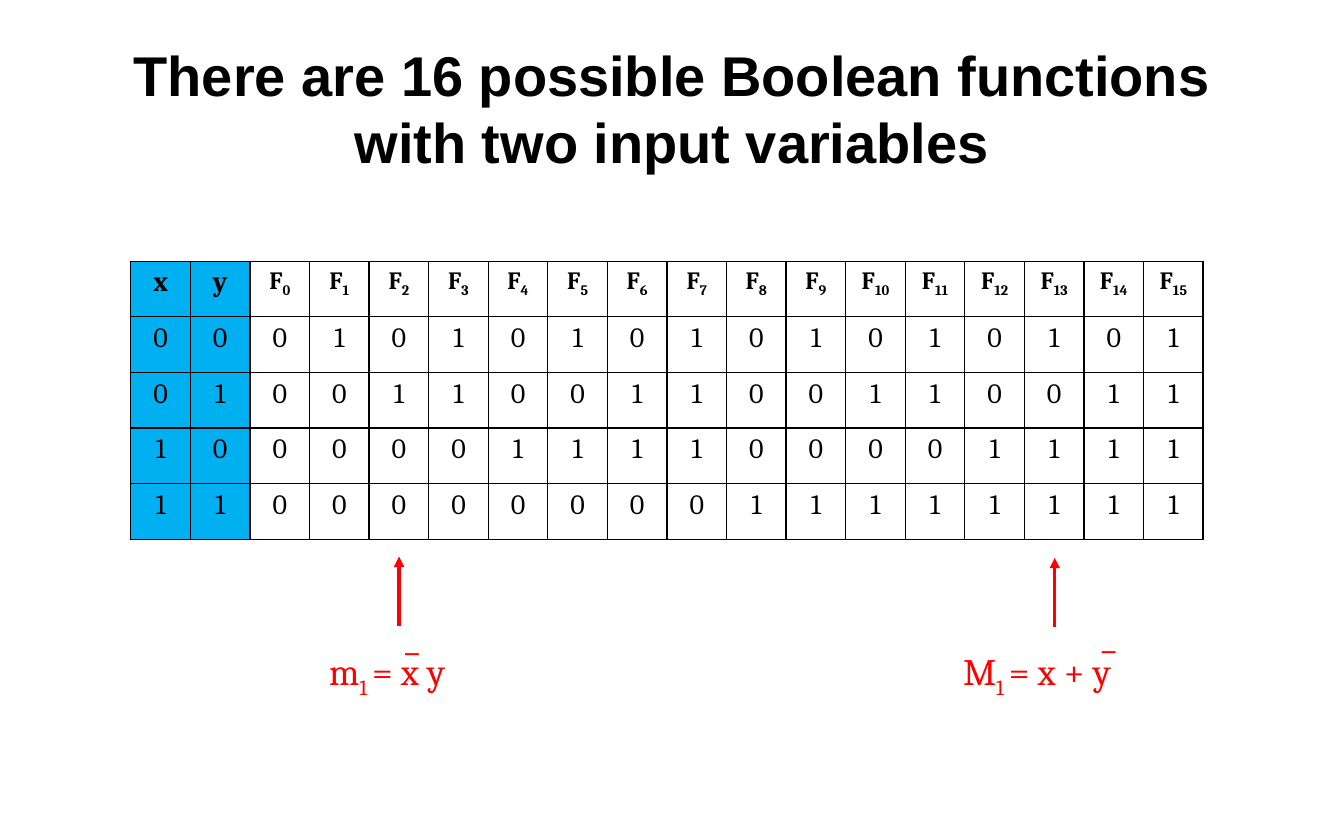
from pptx import Presentation
from pptx.dml.color import RGBColor
from pptx.enum.shapes import MSO_CONNECTOR
from pptx.enum.text import MSO_ANCHOR, MSO_AUTO_SIZE, PP_ALIGN
from pptx.oxml import parse_xml
from pptx.oxml.ns import nsdecls
from pptx.util import Pt

LINE = MSO_CONNECTOR.STRAIGHT
MIDDLE = MSO_ANCHOR.MIDDLE
GROW = MSO_AUTO_SIZE.SHAPE_TO_FIT_TEXT
LEFT, CENTER = PP_ALIGN.LEFT, PP_ALIGN.CENTER

BLACK, RED, BLUE = "000000", "FF0000", "00B0F0"
TABLE_X, TABLE_Y = 84.1, 167.9
COL, ROW = 38.32, 35.76
COUNT = 16


def color(code):
    return RGBColor.from_string(code)


def edge(side):
    return parse_xml(
        f'<a:{side} {nsdecls("a")} w="12700"><a:solidFill>'
        f'<a:srgbClr val="{BLACK}"/></a:solidFill></a:{side}>')


class Painter:
    def __init__(self, slide):
        self.slide = slide
        self.head = "Arial"
        self.body = "Cambria"

    def text(self, para, parts, size, face, ink=BLACK, bold=False, align=LEFT):
        """Fill a paragraph with parts: normal, subscript, normal, ..."""
        para.alignment = align
        font = para.font
        font.name, font.size, font.bold = face, Pt(size), bold
        font.color.rgb = color(ink)
        for i, part in enumerate(parts):
            run = para.add_run()
            run.text = part
            if i % 2:
                run._r.get_or_add_rPr().set("baseline", "-25000")

    def title(self, lines, x, y, w, h):
        box = self.slide.shapes.add_textbox(Pt(x), Pt(y), Pt(w), Pt(h))
        frame = box.text_frame
        frame.word_wrap = True
        frame.vertical_anchor = MIDDLE
        para = frame.paragraphs[0]
        for i, line in enumerate(lines):
            if i:
                para.add_line_break()
            self.text(para, [line], 36, self.head, bold=True, align=CENTER)

    def label(self, group, parts, x, y, w):
        box = group.shapes.add_textbox(Pt(x), Pt(y), Pt(w), Pt(36))
        frame = box.text_frame
        frame.word_wrap = False
        frame.auto_size = GROW
        self.text(frame.paragraphs[0], parts, 24, self.body, RED)

    def term(self, parts, x, w, bar_x, bar_y):
        """Draw a formula with a bar over its negated variable."""
        group = self.slide.shapes.add_group_shape()
        self.label(group, parts, x, 413.3, w)
        self.label(group, ["_"], bar_x, bar_y, 26.6)

    def arrow(self, x, top, size=44.6):
        """Draw an arrow that points up to top."""
        line = self.slide.shapes.add_connector(
            LINE, Pt(x), Pt(top + size), Pt(x), Pt(top))
        line.line.width = Pt(2.25)
        line.line.color.rgb = color(RED)
        line.line._get_or_add_ln().append(
            parse_xml(f'<a:tailEnd {nsdecls("a")} type="triangle"/>'))
        line._element.spPr.append(parse_xml(f'<a:effectLst {nsdecls("a")}/>'))

    def cell(self, cell, parts, size, bold, fill):
        props = cell._tc.get_or_add_tcPr()
        for side in ("lnL", "lnR", "lnT", "lnB"):
            props.append(edge(side))
        if fill:
            cell.fill.solid()
            cell.fill.fore_color.rgb = color(fill)
        else:
            cell.fill.background()
        self.text(cell.text_frame.paragraphs[0], parts, size, self.body,
                  bold=bold, align=CENTER)

    def table(self, rows, x, y):
        high, wide = len(rows), len(rows[0])
        table = self.slide.shapes.add_table(
            high, wide, Pt(x), Pt(y), Pt(COL * wide), Pt(ROW * high)).table
        table.first_row = table.horz_banding = False
        for col in table.columns:
            col.width = Pt(COL)
        for r, row in enumerate(rows):
            table.rows[r].height = Pt(ROW)
            for c, parts in enumerate(row):
                size = 16 if len(parts) > 1 else 18
                fill = BLUE if c < 2 else None
                self.cell(table.cell(r, c), parts, size, r == 0, fill)


def truth():
    """List the header, then each input pair with bit r of every function."""
    rows = [[["x"], ["y"]] + [["F", str(n)] for n in range(COUNT)]]
    for r in range(4):
        bits = [r >> 1, r & 1] + [n >> r & 1 for n in range(COUNT)]
        rows.append([[str(bit)] for bit in bits])
    return rows


def center(n):
    """Return the middle of the column of function n."""
    return TABLE_X + (n + 2.5) * COL


def main():
    deck = Presentation()
    deck.slide_width, deck.slide_height = Pt(864), Pt(540)
    art = Painter(deck.slides.add_slide(deck.slide_layouts[6]))
    art.title(["There are 16 possible Boolean functions",
               "with two input variables"], 72, 24, 720, 90)
    art.table(truth(), TABLE_X, TABLE_Y)
    art.arrow(center(2), 357.8)
    art.arrow(center(13), 358.6)
    art.term(["m", "1 ", "= x y"], 204.5, 95.8, 253.4, 391)
    art.term(["M", "1 ", "= x + y"], 612, 118, 701.3, 390.2)
    deck.save("out.pptx")


if __name__ == "__main__":
    main()
